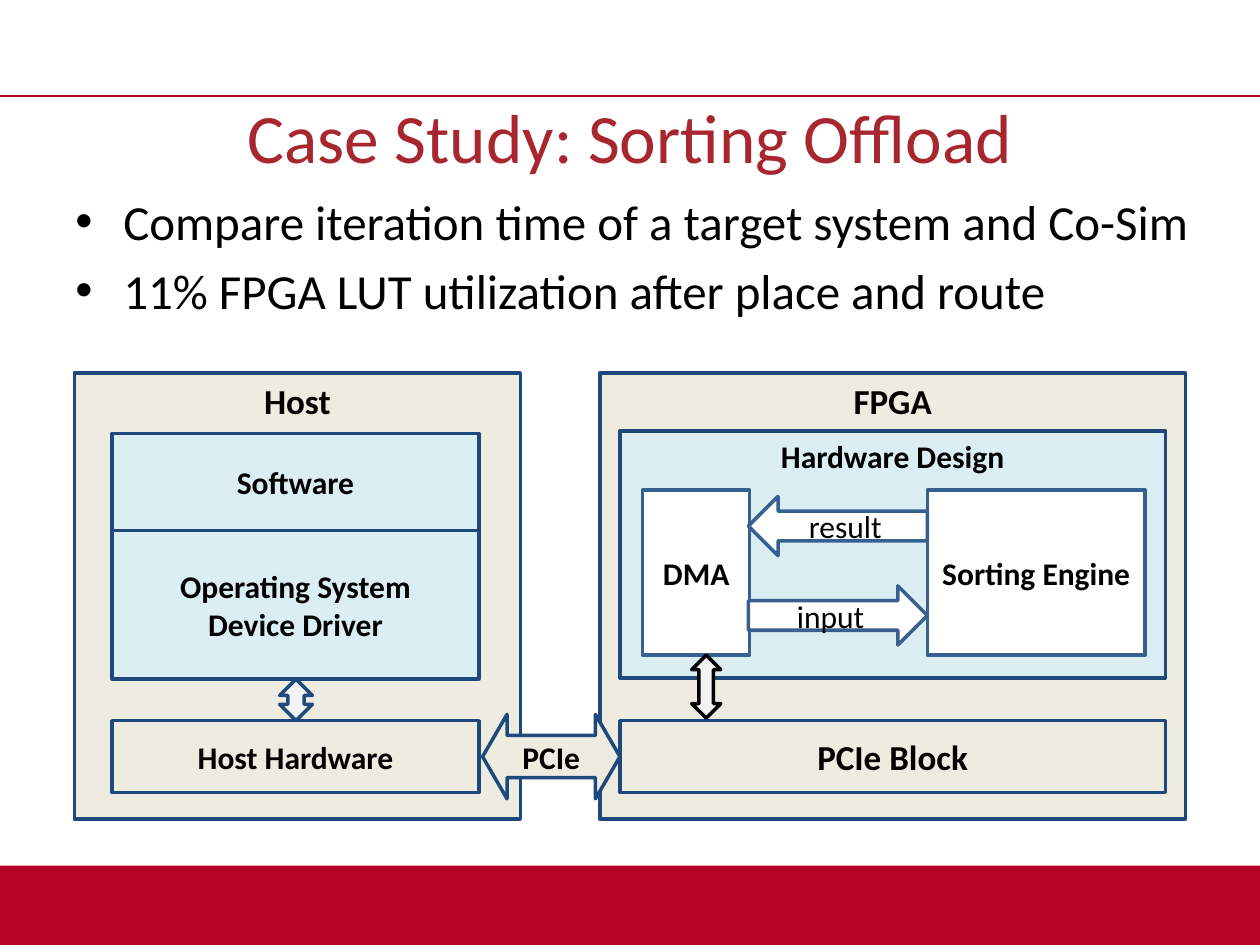
"""Build the sorting offload case study slide."""
from dataclasses import dataclass

from lxml.etree import SubElement
from pptx import Presentation
from pptx.dml.color import RGBColor
from pptx.enum.shapes import MSO_CONNECTOR, MSO_SHAPE
from pptx.enum.text import MSO_ANCHOR, MSO_AUTO_SIZE, PP_ALIGN
from pptx.oxml.ns import qn
from pptx.slide import Slide
from pptx.text.text import TextFrame
from pptx.util import Inches, Pt

HUES = {
    "red": "B60225", "title": "A7262F", "black": "000000", "white": "FFFFFF",
    "sand": "EEECE1", "sky": "DBEEF4", "gray": "F2F2F2",
    "navy": "1F497D", "blue": "376092", "steel": "3A5F8C",
}
MID, TOP = MSO_ANCHOR.MIDDLE, MSO_ANCHOR.TOP
RECT, UPDOWN = MSO_SHAPE.RECTANGLE, MSO_SHAPE.UP_DOWN_ARROW


@dataclass
class Block:
    """A filled and outlined shape with an optional label."""
    at: tuple[float, float, float, float]
    fill: str
    text: str = ""
    size: float = 18
    edge: str = "navy"
    kind: MSO_SHAPE = RECT
    bold: bool = True
    anchor: MSO_ANCHOR = MID
    adjust: tuple[float, ...] = ()


ROW, DECK, BUS = 2.96, 3.89, 5.72
HOST = [
    Block((0.59, ROW, 3.54, 3.54), "sand", "Host", 20, anchor=TOP),
    Block((0.89, 3.44, 2.91, 0.77), "sky", "Software"),
    Block((0.89, 4.21, 2.91, 1.18), "sky", "Operating System\nDevice Driver"),
    Block((0.89, BUS, 2.91, 0.57), "sand", "Host Hardware"),
    Block((2.22, 5.39, 0.26, 0.33), "gray", kind=UPDOWN),
]
FPGA = [
    Block((4.76, ROW, 4.65, 3.54), "sand", "FPGA", 20, anchor=TOP),
    Block((4.92, BUS, 4.33, 0.57), "sand", "PCIe Block", 20),
    Block((4.92, 3.42, 4.33, 1.96), "sky", "Hardware Design", anchor=TOP),
    Block((7.36, DECK, 1.73, 1.31), "white", "Sorting Engine", edge="blue"),
    Block((5.1, DECK, 0.85, 1.31), "white", "DMA", edge="blue"),
    Block((5.49, 5.2, 0.23, 0.5), "gray", edge="black", kind=UPDOWN),
    Block((5.94, 3.94, 1.42, 0.47), "white", "result", edge="blue",
          kind=MSO_SHAPE.LEFT_ARROW, bold=False),
    Block((5.94, 4.65, 1.42, 0.47), "white", "input", edge="steel",
          kind=MSO_SHAPE.RIGHT_ARROW, bold=False),
]
LINK = Block((3.83, 5.67, 1.09, 0.67), "sand", "PCIe",
             kind=MSO_SHAPE.LEFT_RIGHT_ARROW, adjust=(0.5, 0.29))
POINTS = [
    "Compare iteration time of a target system and Co-Sim",
    "11% FPGA LUT utilization after place and route",
]


def tint(name: str) -> RGBColor:
    """Look up a named colour."""
    return RGBColor.from_string(HUES[name])


def style(frame: TextFrame, size: float, hue: str = "black",
          bold: bool = False, align: PP_ALIGN = PP_ALIGN.CENTER) -> None:
    """Format every paragraph of a text frame."""
    look = {"name": "Calibri", "size": Pt(size), "bold": bold}
    for para in frame.paragraphs:
        para.alignment = align
        for key, value in look.items():
            setattr(para.font, key, value)
        para.font.color.rgb = tint(hue)


def draw(slide: Slide, block: Block) -> None:
    """Draw one block."""
    shape = slide.shapes.add_shape(block.kind, *map(Inches, block.at))
    shape.shadow.inherit = False
    shape.fill.solid()
    shape.fill.fore_color.rgb = tint(block.fill)
    shape.line.color.rgb = tint(block.edge)
    shape.line.width = Pt(2)
    for index, value in enumerate(block.adjust):
        shape.adjustments[index] = value
    if block.text:
        frame = shape.text_frame
        frame.text = block.text
        frame.vertical_anchor = block.anchor
        style(frame, block.size, bold=block.bold)


def frame_page(slide: Slide) -> None:
    """Draw the footer band and the rule above the title."""
    band = slide.shapes.add_shape(RECT, *map(Inches, (0, 6.87, 10, 0.63)))
    band.shadow.inherit = False
    band.fill.solid()
    band.fill.fore_color.rgb = tint("red")
    band.line.fill.background()
    rule = slide.shapes.add_connector(
        MSO_CONNECTOR.STRAIGHT, *map(Inches, (0, 0.76, 10, 0.76)))
    rule.line.color.rgb = tint("red")
    rule.line.width = Pt(1)
    SubElement(rule.element.spPr, qn("a:effectLst"))


def head(slide: Slide, text: str) -> None:
    """Place and format the title."""
    title = slide.shapes.title
    spot = {"left": 0, "top": 0.76, "width": 10, "height": 0.63}
    for key, value in spot.items():
        setattr(title, key, Inches(value))
    frame = title.text_frame
    frame.text = text
    frame.auto_size = MSO_AUTO_SIZE.NONE
    frame.vertical_anchor = MID
    style(frame, 39.6, "title")


def listing(slide: Slide, points: list[str]) -> None:
    """Add the bullet list."""
    box = slide.shapes.add_textbox(*map(Inches, (0.5, 1.47, 9.22, 1.13)))
    frame = box.text_frame
    frame.word_wrap = True
    frame.text = "\n".join(points)
    for para in frame.paragraphs:
        props = para._p.get_or_add_pPr()
        props.set("marL", str(Inches(0.38)))
        props.set("indent", str(Inches(-0.38)))
        SubElement(props, qn("a:buFont"), typeface="Arial")
        SubElement(props, qn("a:buChar"), char="•")
    for para in frame.paragraphs[1:]:
        para.space_before = Pt(5.6)
    style(frame, 28, align=PP_ALIGN.LEFT)


def main() -> None:
    """Build and save the slide."""
    deck = Presentation()
    deck.slide_width, deck.slide_height = Inches(10), Inches(7.5)
    slide = deck.slides.add_slide(deck.slide_layouts[5])
    frame_page(slide)
    head(slide, "Case Study: Sorting Offload")
    listing(slide, POINTS)
    for block in [*FPGA, *HOST, LINK]:
        draw(slide, block)
    deck.save("out.pptx")


if __name__ == "__main__":
    main()
